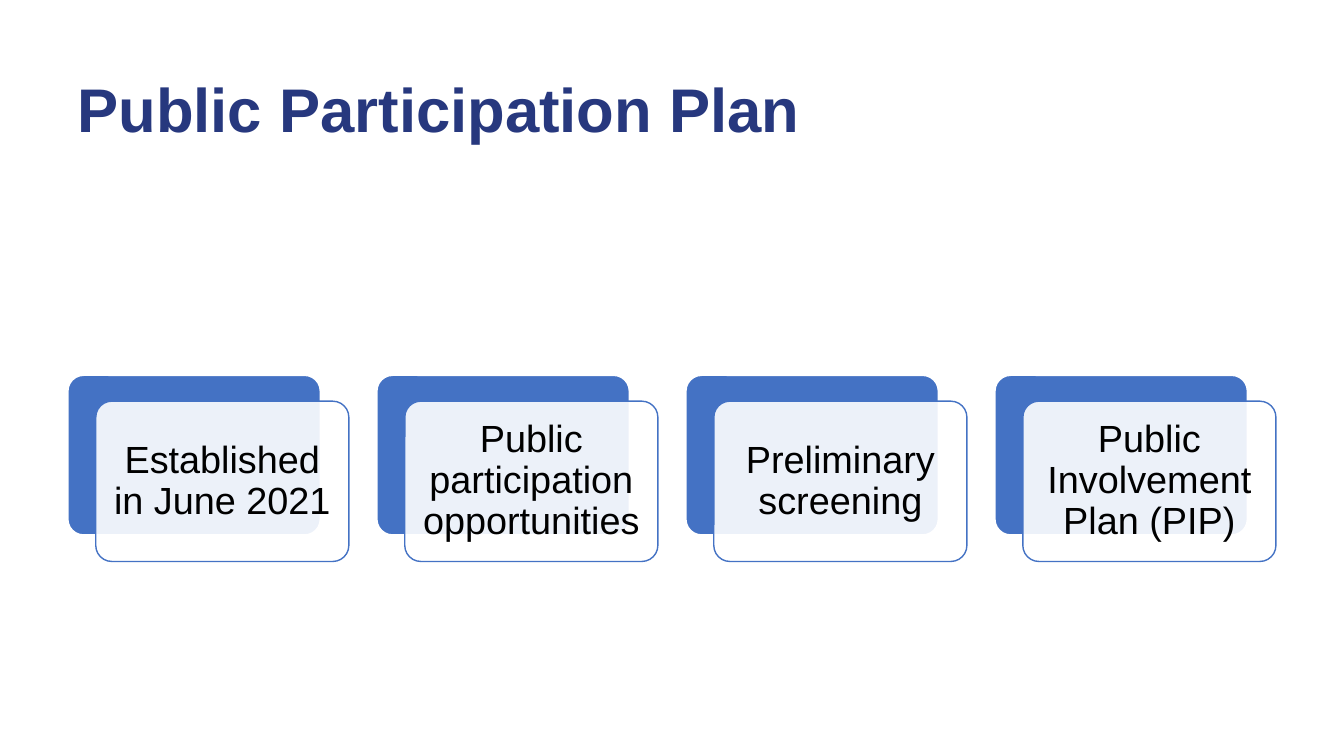
"""Build the Public Participation Plan slide with four layered cards."""
from dataclasses import dataclass

from lxml import etree
from pptx import Presentation
from pptx.dml.color import RGBColor
from pptx.enum.shapes import MSO_SHAPE
from pptx.enum.text import MSO_ANCHOR, MSO_AUTO_SIZE, PP_ALIGN
from pptx.oxml.ns import qn
from pptx.util import Inches, Pt

ROUNDED = MSO_SHAPE.ROUNDED_RECTANGLE
TOP, MIDDLE = MSO_ANCHOR.TOP, MSO_ANCHOR.MIDDLE
LEFT, CENTER = PP_ALIGN.LEFT, PP_ALIGN.CENTER
NO_AUTOFIT = MSO_AUTO_SIZE.NONE


@dataclass(frozen=True)
class Theme:
    font: str = "Arial"
    title_size: int = 44
    card_size: int = 27
    navy: RGBColor = RGBColor.from_string("27387E")
    blue: RGBColor = RGBColor.from_string("4472C4")
    white: RGBColor = RGBColor.from_string("FFFFFF")
    black: RGBColor = RGBColor.from_string("000000")


theme = Theme()


def write_text(shape, text, *, size, color, bold=False, align=LEFT, anchor=TOP,
               side_inset=0.1, edge_inset=0.05):
    frame = shape.text_frame
    frame.word_wrap = True
    frame.auto_size = NO_AUTOFIT
    frame.vertical_anchor = anchor
    frame.margin_left = frame.margin_right = Inches(side_inset)
    frame.margin_top = frame.margin_bottom = Inches(edge_inset)
    frame.text = text
    paragraph = frame.paragraphs[0]
    paragraph.alignment = align
    paragraph.line_spacing = 0.9
    paragraph.space_before = Pt(0)
    font = paragraph.runs[0].font
    font.name, font.size, font.bold = theme.font, Pt(size), bold
    font.color.rgb = color


def add_card(left, top, fill, line, line_width):
    card = slide.shapes.add_shape(ROUNDED, Inches(left), Inches(top),
                                  Inches(CARD_WIDTH), Inches(CARD_HEIGHT))
    card.adjustments[0] = 0.1
    card.shadow.inherit = False
    card.fill.solid()
    card.fill.fore_color.rgb = fill
    card.line.color.rgb = line
    card.line.width = Pt(line_width)
    return card


presentation = Presentation()
presentation.slide_width = Inches(13.33)
presentation.slide_height = Inches(7.5)
slide = presentation.slides.add_slide(presentation.slide_layouts[5])

title = slide.shapes.title
title.left, title.top = Inches(0.67), Inches(0.74)
title.width, title.height = Inches(11.99), Inches(1.45)
write_text(title, "Public Participation Plan", size=theme.title_size,
           color=theme.navy, bold=True)

CARD_LEFT, CARD_TOP = 0.67, 3.72
CARD_WIDTH, CARD_HEIGHT = 2.51, 1.59
CARD_PITCH = 3.065
OFFSET_X, OFFSET_Y = 0.28, 0.26

card_labels = [
    "Established in June 2021",
    "Public participation opportunities",
    "Preliminary screening",
    "Public Involvement Plan (PIP)",
]

for index, label in enumerate(card_labels):
    left = CARD_LEFT + index * CARD_PITCH
    add_card(left, CARD_TOP, theme.blue, theme.white, 1.5)
    front = add_card(left + OFFSET_X, CARD_TOP + OFFSET_Y, theme.white, theme.blue, 1)
    fill_color = front.fill._xPr.find(qn("a:solidFill"))[0]
    etree.SubElement(fill_color, qn("a:alpha"), val="90000")
    write_text(front, label, size=theme.card_size, color=theme.black,
               align=CENTER, anchor=MIDDLE, edge_inset=0.1)

presentation.save("out.pptx")
